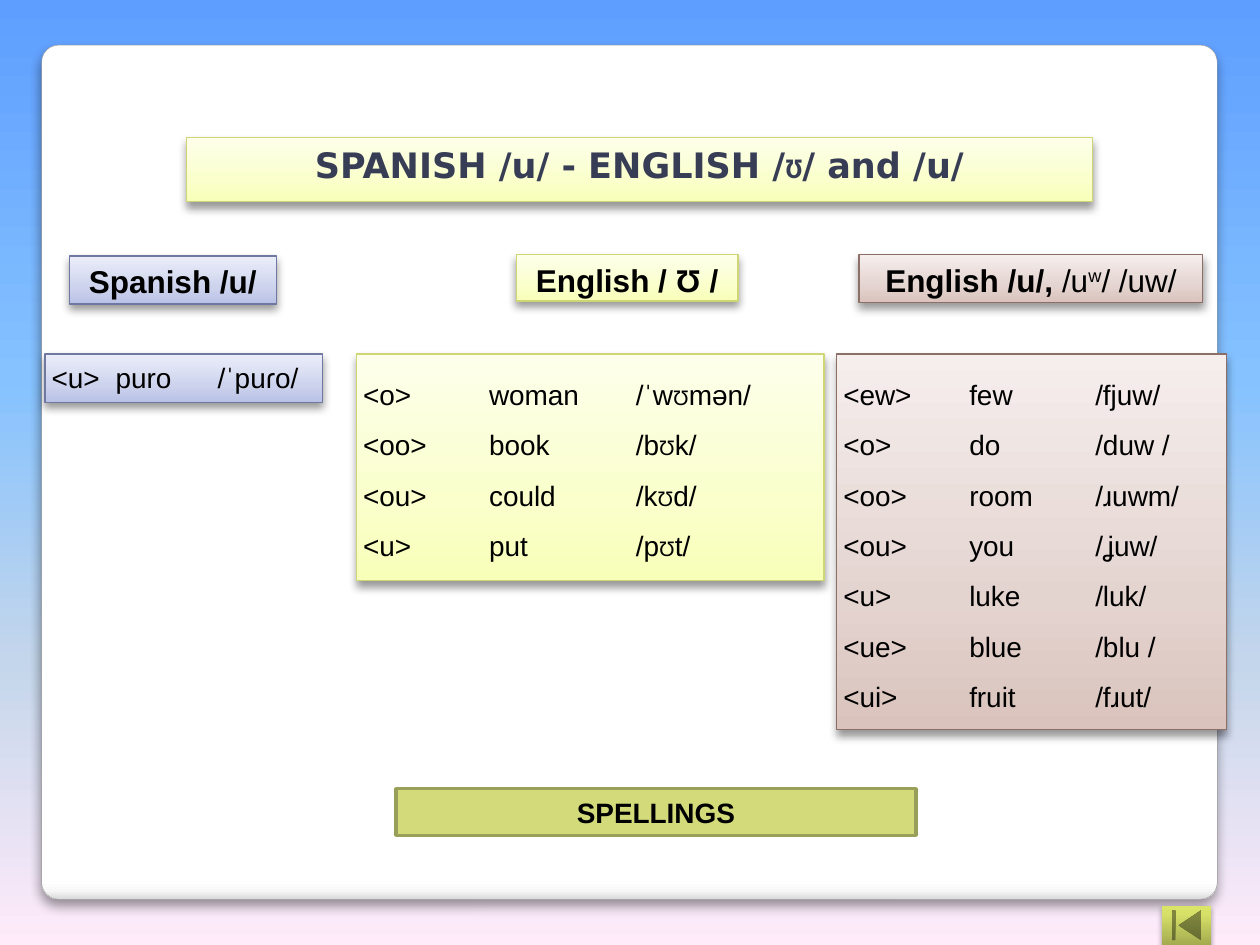
from pptx import Presentation
from pptx.dml.color import RGBColor
from pptx.enum.shapes import MSO_SHAPE
from pptx.enum.text import MSO_ANCHOR, PP_ALIGN
from pptx.oxml.ns import qn
from pptx.util import Cm, Pt
from lxml.etree import SubElement

COLORS = {"text": "000000", "title": "373D54", "panel line": "A2A1A1", "olive": "D2DA7A",
          "olive line": "999F59", "blue line": "6E78A0", "lime line": "CFD775",
          "rose line": "8C7067", "shadow": "000000"}
GRADIENTS = {
    "sky": [(0, "5E9EFF"), (40, "85C2FF"), (70, "C4D6EB"), (100, "FFEBFA")],
    "panel": [(0, "FFFFFF"), (98, "FFFFFF"), (99, "F7F7F7"), (100, "D9D9D9")],
    "blue": [(0, "B9C1E6"), (35, "CDD3ED"), (100, "EBEEF9")],
    "lime": [(0, "F8FFB8"), (35, "FAFFCC"), (100, "FDFFEB")],
    "rose": [(0, "DAC3BC"), (35, "E4D4D0"), (100, "F5EEED")],
    "button": [(0, "A3AB4F"), (80, "D7E168"), (100, "DAE466")],
}
HEADING = {"size": Pt(18), "bold": True}
PLAIN = {"bold": False}
SMALL = {"size": Pt(12)}


class SlideBuilder:
    """Holds the text style and the current slide."""

    def __init__(self, presentation):
        self.slide = presentation.slides.add_slide(presentation.slide_layouts[6])
        self.style = {"name": "Arial", "size": Pt(16), "bold": False}
        self.margin = Cm(0.13)

    def gradient(self, fill, element, name, angle=90):
        fill.gradient()
        fill.gradient_angle = angle
        stops = element.find(".//" + qn("a:gsLst"))
        for stop in list(stops):
            stops.remove(stop)
        for position, color in GRADIENTS[name]:
            stop = SubElement(stops, qn("a:gs"), pos=str(position * 1000))
            SubElement(stop, qn("a:srgbClr"), val=color)

    def background(self, name):
        self.gradient(self.slide.background.fill, self.slide.element, name, 270)

    def shadow(self, shape, opacity, blur, distance):
        effects = shape.element.spPr.find(qn("a:effectLst"))
        outer = SubElement(effects, qn("a:outerShdw"), blurRad=str(Pt(blur)), dist=str(Pt(distance)),
                           dir="5400000", algn="t", rotWithShape="0")
        color = SubElement(outer, qn("a:srgbClr"), val=COLORS["shadow"])
        SubElement(color, qn("a:alpha"), val=str(opacity * 1000))

    def shape(self, kind, place, fill, line=None, width=0.75, angle=90, shadow=(40, 5, 3)):
        shape = self.slide.shapes.add_shape(kind, *map(Cm, place))
        shape.shadow.inherit = False
        if fill in GRADIENTS:
            self.gradient(shape.fill, shape.element, fill, angle)
        else:
            shape.fill.solid()
            shape.fill.fore_color.rgb = RGBColor.from_string(COLORS[fill])
        if line:
            shape.line.color.rgb = RGBColor.from_string(COLORS[line])
            shape.line.width = Pt(width)
        else:
            shape.line.fill.background()
        if shadow:
            self.shadow(shape, *shadow)
        return shape

    def box(self, place, fill, rows, formats=None, color="text", align=PP_ALIGN.CENTER,
            spacing=None, tabs=(), **look):
        shape = self.shape(MSO_SHAPE.RECTANGLE, place, fill, fill + " line", **look)
        frame = shape.text_frame
        frame.word_wrap = True
        frame.vertical_anchor = MSO_ANCHOR.TOP
        for side in ("left", "right", "top", "bottom"):
            setattr(frame, "margin_" + side, self.margin)
        for index, row in enumerate(rows):
            paragraph = frame.add_paragraph() if index else frame.paragraphs[0]
            paragraph.alignment = align
            if spacing:
                paragraph.line_spacing = spacing
            if tabs:
                stops = SubElement(paragraph._p.get_or_add_pPr(), qn("a:tabLst"))
                for tab in tabs:
                    SubElement(stops, qn("a:tab"), pos=str(Cm(tab)), algn="l")
            for text, changes in row:
                self.run(paragraph, text, color, {**self.style, **(formats or {}), **changes})

    def run(self, paragraph, text, color, formats):
        run = paragraph.add_run()
        run.text = text
        run.font.color.rgb = RGBColor.from_string(COLORS[color])
        for name, value in formats.items():
            if name == "baseline":
                run.font._element.set(name, value)
            else:
                setattr(run.font, name, value)

    def table_box(self, place, fill, rows, tabs, spacing=1.5):
        self.box(place, fill, rows, align=PP_ALIGN.LEFT, spacing=spacing, tabs=tabs)


def main():
    presentation = Presentation()
    presentation.slide_width, presentation.slide_height = Cm(25.4), Cm(19.05)
    builder = SlideBuilder(presentation)
    builder.background("sky")
    panel = builder.shape(MSO_SHAPE.ROUNDED_RECTANGLE, (0.84, 0.91, 23.7, 17.22), "panel",
                          "panel line", 0.25, angle=270, shadow=(40, 6, 4))
    panel.adjustments[0] = 0.02

    builder.box((3.76, 2.77, 18.26, 1.3), "lime",
                [[("SPANISH /u/ - ENGLISH /", {}),
                  ("Ʊ", {"name": "Courier New", "size": Pt(16)}),
                  ("/ and /u/", {})]],
                {"name": "DejaVu Sans", "size": Pt(20), "bold": True}, "title")

    builder.box((1.4, 5.16, 4.17, 0.97), "blue", [[("Spanish /u/", {})]], HEADING)
    builder.box((10.41, 5.13, 4.47, 0.94), "lime", [[("English / Ʊ /", {})]], HEADING)
    builder.box((17.32, 5.13, 6.93, 0.97), "rose",
                [[("English /u/, ", {}), ("/u", PLAIN), ("w", {**PLAIN, "baseline": "30000"}),
                  ("/ /uw/", PLAIN)]], HEADING)

    lax_words = [("<o>", "woman", "/ˈw", "mən/"), ("<oo>", "book", "/b", "k/"),
                 ("<ou>", "could", "/k", "d/"), ("<u>", "put", "/p", "t/")]
    tense_words = [("<ew>", "few", "/fjuw/"), ("<o>", "do", "/duw /"), ("<oo>", "room", "/ɹuwm/"),
                   ("<ou>", "you", "/ʝuw/"), ("<u>", "luke", "/luk/"), ("<ue>", "blue", "/blu /"),
                   ("<ui>", "fruit", "/fɹut/")]
    builder.table_box((0.91, 7.14, 5.59, 0.97), "blue", [[("<u>\tpuro\t/ˈpuɾo/", {})]],
                      (1.29, 3.35), 1)
    builder.table_box((7.19, 7.14, 9.42, 4.57), "lime",
                      [[("\t".join((spelling, word, start)), {}), ("Ʊ", SMALL), (end, {})]
                       for spelling, word, start, end in lax_words], (2.54, 5.5))
    builder.table_box((16.87, 7.14, 7.85, 7.57), "rose",
                      [[("\t".join(cells), {})] for cells in tense_words], (2.54, 5.08))

    builder.box((7.98, 15.9, 10.49, 0.94), "olive", [[("SPELLINGS", {})]], {"bold": True},
                width=2, shadow=None)
    builder.shape(MSO_SHAPE.ACTION_BUTTON_BEGINNING, (23.42, 18.26, 0.99, 0.79), "button",
                  shadow=(35, 3, 1.8))
    presentation.save("out.pptx")


if __name__ == "__main__":
    main()
